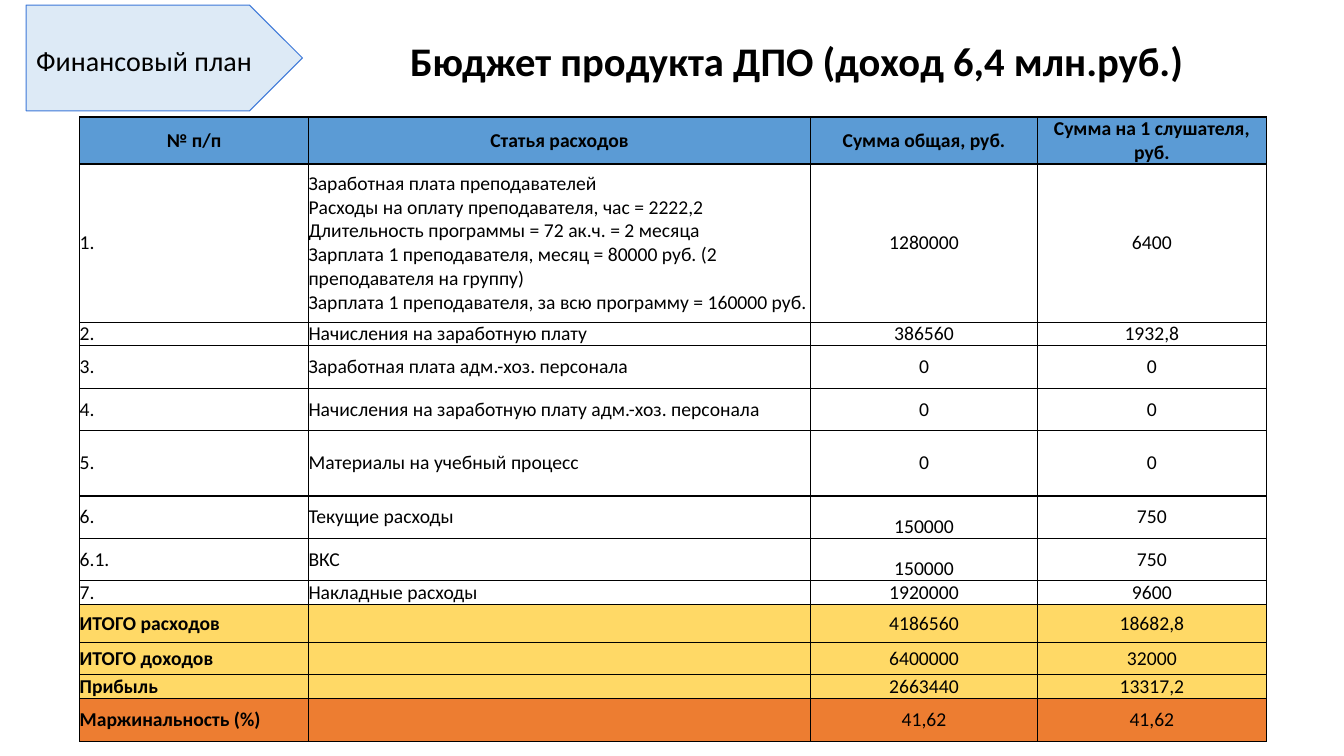
from lxml import etree
from pptx import Presentation
from pptx.dml.color import RGBColor
from pptx.enum import shapes, text
from pptx.oxml.ns import qn
from pptx.util import Inches, Pt

BLACK = RGBColor(0x00, 0x00, 0x00)
PALE_BLUE = RGBColor(0xDD, 0xEA, 0xF6)
OUTLINE_BLUE = RGBColor(0x3C, 0x78, 0xD8)
HEADER_BLUE = RGBColor(0x5B, 0x9B, 0xD5)
TOTAL_YELLOW = RGBColor(0xFF, 0xD9, 0x66)
MARGIN_ORANGE = RGBColor(0xED, 0x7D, 0x31)

COLUMN_WIDTHS = [2.27, 4.98, 2.25, 2.27]
TEACHER_PAY = "\n".join([
    "Заработная плата преподавателей",
    "Расходы на оплату преподавателя, час = 2222,2",
    "Длительность программы = 72 ак.ч. = 2 месяца",
    "Зарплата 1 преподавателя, месяц = 80000 руб. (2 преподавателя на группу)",
    "Зарплата 1 преподавателя, за всю программу = 160000 руб.",
])
BUDGET = [
    (0.45, HEADER_BLUE, ["№ п/п", "Статья расходов", "Сумма общая, руб.", "Сумма на 1 слушателя, руб."]),
    (1.57, None, ["1.", TEACHER_PAY, "1280000", "6400"]),
    (0.23, None, ["2.", "Начисления на заработную плату", "386560", "1932,8"]),
    (0.42, None, ["3.", "Заработная плата адм.-хоз. персонала", "0", "0"]),
    (0.42, None, ["4.", "Начисления на заработную плату адм.-хоз. персонала", "0", "0"]),
    (0.65, None, ["5.", "Материалы на учебный процесс", "0", "0"]),
    (0.42, None, ["6.", "Текущие расходы", "150000", "750"]),
    (0.42, None, ["6.1.", "ВКС", "150000", "750"]),
    (0.23, None, ["7.", "Накладные расходы", "1920000", "9600"]),
    (0.38, TOTAL_YELLOW, ["ИТОГО расходов", "", "4186560", "18682,8"]),
    (0.32, TOTAL_YELLOW, ["ИТОГО доходов", "", "6400000", "32000"]),
    (0.23, TOTAL_YELLOW, ["Прибыль", "", "2663440", "13317,2"]),
    (0.43, MARGIN_ORANGE, ["Маржинальность (%)", "", "41,62", "41,62"]),
]


def style_text(frame, size, bold, align):
    for paragraph in frame.paragraphs:
        paragraph.alignment = align
        for run in paragraph.runs:
            run.font.name = "Calibri"
            run.font.size = Pt(size)
            run.font.bold = bold
            run.font.color.rgb = BLACK
        if not paragraph.runs:
            etree.SubElement(paragraph._p, qn("a:endParaRPr"), sz=str(size * 100))


def add_borders(cell):
    for position, side in enumerate(["a:lnL", "a:lnR", "a:lnT", "a:lnB"]):
        border = etree.Element(qn(side), w=str(Pt(1)))
        fill = etree.SubElement(border, qn("a:solidFill"))
        etree.SubElement(fill, qn("a:srgbClr"), val=str(BLACK))
        cell._tc.get_or_add_tcPr().insert(position, border)


deck = Presentation()
deck.slide_width = Inches(13.33)
deck.slide_height = Inches(7.5)
slide = deck.slides.add_slide(deck.slide_layouts[6])

section_arrow = slide.shapes.add_shape(
    shapes.MSO_SHAPE.PENTAGON, Inches(0.26), Inches(0.05), Inches(2.74), Inches(1.05))
section_arrow.adjustments[0] = 0.5
section_arrow.shadow.inherit = False
section_arrow.fill.solid()
section_arrow.fill.fore_color.rgb = PALE_BLUE
section_arrow.line.color.rgb = OUTLINE_BLUE
section_arrow.line.width = Pt(0.75)

section_label = slide.shapes.add_textbox(Inches(0.26), Inches(0.33), Inches(2.55), Inches(0.54))
section_frame = section_label.text_frame
section_frame.word_wrap = True
section_frame.margin_top = section_frame.margin_bottom = Inches(0.1)
section_frame.text = "Финансовый план"
style_text(section_frame, 20, False, text.PP_ALIGN.LEFT)

budget_table = slide.shapes.add_table(
    len(BUDGET), len(COLUMN_WIDTHS),
    Inches(0.79), Inches(1.16), Inches(11.76), Inches(6.28)).table
budget_table.horz_banding = False
budget_table.first_row = False
for column, width in zip(budget_table.columns, COLUMN_WIDTHS):
    column.width = Inches(width)

for row_index, (height, row_color, entries) in enumerate(BUDGET):
    budget_table.rows[row_index].height = Inches(height)
    for column_index, entry in enumerate(entries):
        cell = budget_table.cell(row_index, column_index)
        cell.text = entry
        cell.margin_left = cell.margin_right = cell.margin_top = cell.margin_bottom = 0
        bottom_aligned = column_index == 2 and entry == "150000"
        cell.vertical_anchor = text.MSO_ANCHOR.BOTTOM if bottom_aligned else text.MSO_ANCHOR.MIDDLE
        if row_color is None:
            cell.fill.background()
        else:
            cell.fill.solid()
            cell.fill.fore_color.rgb = row_color
        is_header = row_index == 0
        centered = is_header or column_index > 1
        bold = is_header or (row_color is not None and column_index == 0)
        style_text(cell.text_frame, 14, bold,
                   text.PP_ALIGN.CENTER if centered else text.PP_ALIGN.LEFT)
        add_borders(cell)

title = slide.shapes.add_textbox(Inches(2.81), Inches(0.27), Inches(10.19), Inches(0.62))
title_frame = title.text_frame
title_frame.word_wrap = True
title_frame.vertical_anchor = text.MSO_ANCHOR.MIDDLE
title_frame.text = "Бюджет продукта ДПО (доход 6,4 млн.руб.)"
title_frame.paragraphs[0].line_spacing = 1.07
style_text(title_frame, 29, True, text.PP_ALIGN.CENTER)

deck.save("out.pptx")
